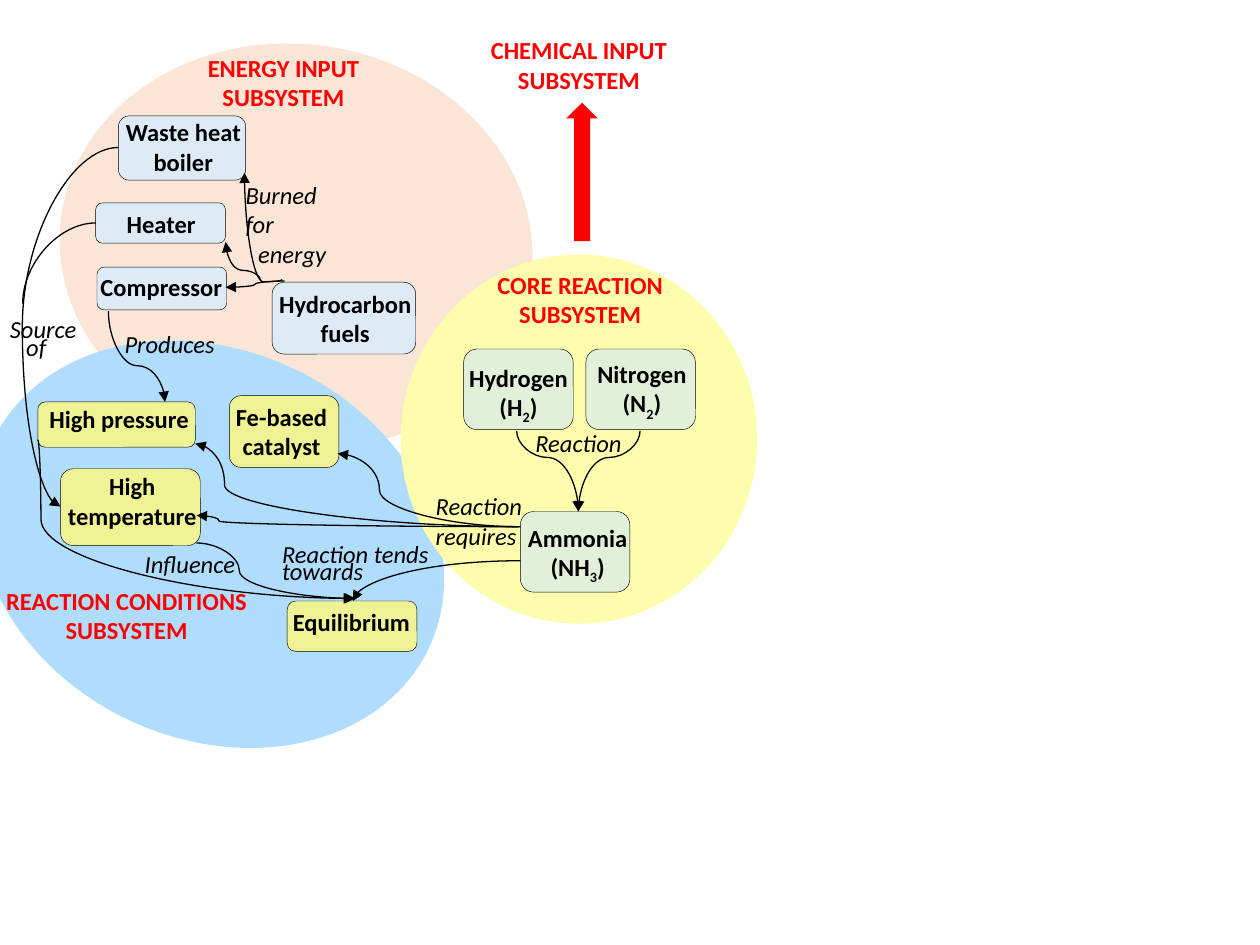
import pptx
import pptx.dml.color
import pptx.enum.shapes
import pptx.enum.text
import pptx.oxml.ns
import pptx.oxml.xmlchemy
import pptx.util

SHAPE = pptx.enum.shapes.MSO_SHAPE
ALIGN = pptx.enum.text.PP_ALIGN
COLORS = {
    "heading": "FF0000", "text": "000000", "line": "000000",
    "energy": "FBE5D6", "conditions": "B0DDFE", "core": "FDFDAD",
    "energy node": "DEEBF7", "condition node": "EFF395", "chemical node": "E2F0D9",
}
COLUMNS, ROWS = 100, 75  # square grid cells over the whole slide
BOXES = {  # left, top, width, height in columns and rows
    "energy": (4.7, 3.5, 37.6, 32.3),
    "conditions": (-2.4, 27.8, 38.3, 30.8),
    "core": (31.8, 20.2, 28.3, 29.3),
    "chemical": (35.5, 2.8, 20.9, 17),
    "slide": (0, 0, COLUMNS, ROWS),
}
TILTS = {"energy": 7.1, "conditions": 25.6, "core": 0}


def cells(*values):
    return [pptx.util.Inches(v * 10 / COLUMNS) for v in values]


def shift(box, part):
    """Move a part, given relative to its region's box, to slide cells."""
    return (box[0] + part[0], box[1] + part[1], *part[2:])


def rgb(name):
    return pptx.dml.color.RGBColor.from_string(COLORS[name])


def add_text(s, place, text, color="text", bold=False, italic=False,
             align=ALIGN.LEFT, margins=(0, 0), spacing=None, last_indent=0):
    """Put each line in a paragraph; an underscore lowers the next character."""
    tf = s.shapes.add_textbox(*cells(*place)).text_frame
    tf.word_wrap = True
    tf.auto_size = pptx.enum.text.MSO_AUTO_SIZE.SHAPE_TO_FIT_TEXT
    tf.margin_left = tf.margin_right = cells(margins[0])[0]
    tf.margin_top = tf.margin_bottom = cells(margins[1])[0]
    for i, line in enumerate(text.split("\n")):
        p = tf.add_paragraph() if i else tf.paragraphs[0]
        p.alignment = align
        if spacing:
            p.line_spacing = pptx.util.Pt(spacing)
        first, *rest = line.split("_")
        pieces = [(first, False)]
        for piece in rest:
            pieces += [(piece[0], True), (piece[1:], False)]
        for piece, lowered in pieces:
            r = p.add_run()
            r.text = piece
            r.font.name, r.font.size = "Calibri", pptx.util.Pt(14)
            r.font.bold, r.font.italic = bold, italic
            r.font.color.rgb = rgb(color)
            if lowered:
                r.font._element.set("baseline", "-25000")
    if last_indent:
        p._p.get_or_add_pPr().set("marL", str(cells(last_indent)[0]))


def add_heading(s, place, text):
    add_text(s, place, text, color="heading", bold=True, align=ALIGN.CENTER)


def add_label(s, place, text, **kwargs):
    add_text(s, place, text, italic=True, margins=(1, 0.5), **kwargs)


def add_filled(s, kind, place, color, rotation=0, outlined=False):
    sp = s.shapes.add_shape(kind, *cells(*place))
    sp.shadow.inherit = False
    sp.rotation = rotation
    sp.fill.solid()
    sp.fill.fore_color.rgb = rgb(color)
    if outlined:
        sp.line.color.rgb = rgb("line")
        sp.line.width = pptx.util.Pt(0.25)
    else:
        sp.line.fill.background()


def add_node(s, place, text, color, dx=0, dy=0, widen=0):
    """Draw a rounded box and its text, set off from the box by dx and dy."""
    x, y, w, h = place
    add_filled(s, SHAPE.ROUNDED_RECTANGLE, place, color, outlined=True)
    add_text(s, (x + dx, y + dy, w + widen, h - dy), text, bold=True, align=ALIGN.CENTER)


def add_curve(s, start, end, bend=None, vertical=False, arrow=True):
    """Draw an S curve turning at the share bend, or a quarter turn without one."""
    (x1, y1), (x2, y2) = start, end
    right, down = x2 > x1, y2 > y1
    w, h = abs(x2 - x1), abs(y2 - y1)
    if vertical:
        w, h = h, w
        rotation, flips = 270, {"flipH": down, "flipV": not down and not right or down and not right}
    else:
        rotation = 0 if right else 180
        flips = {"flipV": right != down}
    if vertical:
        flips["flipV"] = not right
    x, y = (x1 + x2 - w) / 2, (y1 + y2 - h) / 2
    c = s.shapes.add_connector(pptx.enum.shapes.MSO_CONNECTOR.CURVE, *cells(x, y, x + w, y + h))
    c.line.color.rgb = rgb("line")
    c.line.width = pptx.util.Pt(0.75)
    qn, element = pptx.oxml.ns.qn, pptx.oxml.xmlchemy.OxmlElement
    spPr = c._element.spPr
    xfrm = spPr.find(qn("a:xfrm"))
    xfrm.set("rot", str(rotation * 60000))
    for name, flipped in flips.items():
        if flipped:
            xfrm.set(name, "1")
    geometry = spPr.find(qn("a:prstGeom"))
    if bend is None:
        geometry.set("prst", "curvedConnector2")
    else:
        guide = element("a:gd")
        guide.set("name", "adj1")
        guide.set("fmla", f"val {round(bend * 100000)}")
        geometry.find(qn("a:avLst")).append(guide)
    if arrow:
        tail = element("a:tailEnd")
        tail.set("type", "triangle")
        spPr.find(qn("a:ln")).append(tail)
    spPr.append(element("a:effectLst"))


def add_curves(s, box, curves):
    for start, end, bend, vertical in curves:
        add_curve(s, shift(box, start), shift(box, end), bend, vertical)


def add_nodes(s, box, color, nodes):
    for place, text, dx, dy, widen in nodes:
        add_node(s, shift(box, place), text, color, dx, dy, widen)


def add_zones(s, names):
    for name in names:
        add_filled(s, SHAPE.OVAL, BOXES[name], name, TILTS[name])


def add_energy(s, box):
    add_heading(s, shift(box, (9, 0.7, 17.6, 4.7)), "ENERGY INPUT\nSUBSYSTEM")
    add_nodes(s, box, "energy node", [
        ((16.9, 18.9, 11.4, 5.7), "Hydrocarbon\nfuels", 0.1, 0.5, 0),
        ((4.7, 5.7, 10.1, 5.1), "Waste heat boiler", 0.1, 0.1, 0),
        ((2.9, 12.6, 10.3, 3.2), "Heater", 0, 0.5, 0.1),
        ((3, 17.7, 10.3, 3.4), "Compressor", 0, 0.4, -0.1),
    ])
    add_curves(s, box, [
        ((17.7, 18.7), (14.7, 10.2), -0.02, True),
        ((17.9, 18.8), (13.2, 19.3), 0.5, False),
        ((16, 18.8), (13.2, 15.7), 0.27, True),
    ])
    add_label(s, shift(box, (13.8, 10.3, 8.8, 8.1)), "Burned\nfor\nenergy", last_indent=1)


def add_conditions(s, box):
    add_heading(s, shift(box, (2.8, 18.7, 19.3, 4.7)), "REACTION CONDITIONS\nSUBSYSTEM")
    add_nodes(s, box, "condition node", [
        ((20.6, 3.6, 8.7, 5.7), "Fe-based\ncatalyst", -0.2, 0.5, 0),
        ((5.4, 4.1, 12.5, 3.6), "High pressure", 0.2, 0.2, 0),
        ((7.2, 9.4, 11.1, 6.1), "High temperature", 0.5, 0.2, -0.7),
        ((25.2, 19.9, 10.3, 4), "Equilibrium", -0.2, 0.5, 0.3),
    ])
    add_curves(s, box, [
        ((18, 15.3), (30.6, 19.7), 0.27, False),
        ((5.4, 7.1), (30.5, 19.7), 0.01, False),
    ])
    add_label(s, shift(box, (12.9, 15.3, 9.9, 3.4)), "Influence")


def add_core(s, box):
    add_heading(s, shift(box, (3.8, 1.2, 20.9, 4.7)), "CORE REACTION\nSUBSYSTEM")
    add_nodes(s, box, "chemical node", [
        ((5, 7.5, 8.7, 6.4), "Hydrogen\n(H_2)", 0, 1.1, 0),
        ((14.7, 7.5, 8.7, 6.4), "Nitrogen\n(N_2)", 0.2, 0.8, -0.2),
        ((9.5, 20.4, 8.7, 6.4), "Ammonia\n(NH_3)", 0.2, 0.9, 0),
    ])
    add_curves(s, box, [((x, 14), (14.1, 20.4), 0.33, True) for x in (19, 9.2)])
    add_label(s, shift(box, (9.7, 13.3, 9.1, 3.4)), "Reaction")


def add_chemical(s, box):
    add_heading(s, shift(box, (0, 0, 20.9, 4.7)), "CHEMICAL INPUT\nSUBSYSTEM")
    add_filled(s, SHAPE.LEFT_ARROW, shift(box, (5.2, 9.6, 11, 2.5)), "heading", rotation=90)


def add_links(s, box):
    """Join the subsystems with curves and name the relations."""
    add_curves(s, box, [
        ((41.2, 41.8), (26.8, 36), 0.77, False),
        ((41.3, 41.8), (15.5, 35.2), 0.91, False),
        ((41.1, 41.8), (15.6, 40.9), 0.93, False),
        ((41.3, 44.5), (28, 47.7), None, False),
        ((8.6, 24.7), (13.1, 31.9), 0.6, True),
        ((9.4, 11.7), (4.8, 40.2), 1.66, False),
    ])
    add_curve(s, shift(box, (7.6, 17.7)), shift(box, (1.8, 24.1)), arrow=False)
    add_label(s, shift(box, (33.6, 38.5, 10.3, 5.7)), "Reaction requires")
    add_label(s, shift(box, (21.4, 43.2, 14.5, 4)), "Reaction tends towards", spacing=10)
    add_label(s, shift(box, (8.9, 25.6, 9.7, 3.4)), "Produces")
    add_label(s, shift(box, (-0.2, 25.4, 7.4, 4)), "Source\nof", spacing=10, last_indent=1.3)


def main():
    prs = pptx.Presentation()
    prs.slide_width, prs.slide_height = cells(COLUMNS, ROWS)
    s = prs.slides.add_slide(prs.slide_layouts[6])
    add_zones(s, TILTS)
    add_conditions(s, BOXES["conditions"])
    add_core(s, BOXES["core"])
    add_energy(s, BOXES["energy"])
    add_chemical(s, BOXES["chemical"])
    add_links(s, BOXES["slide"])
    prs.save("out.pptx")


if __name__ == "__main__":
    main()
